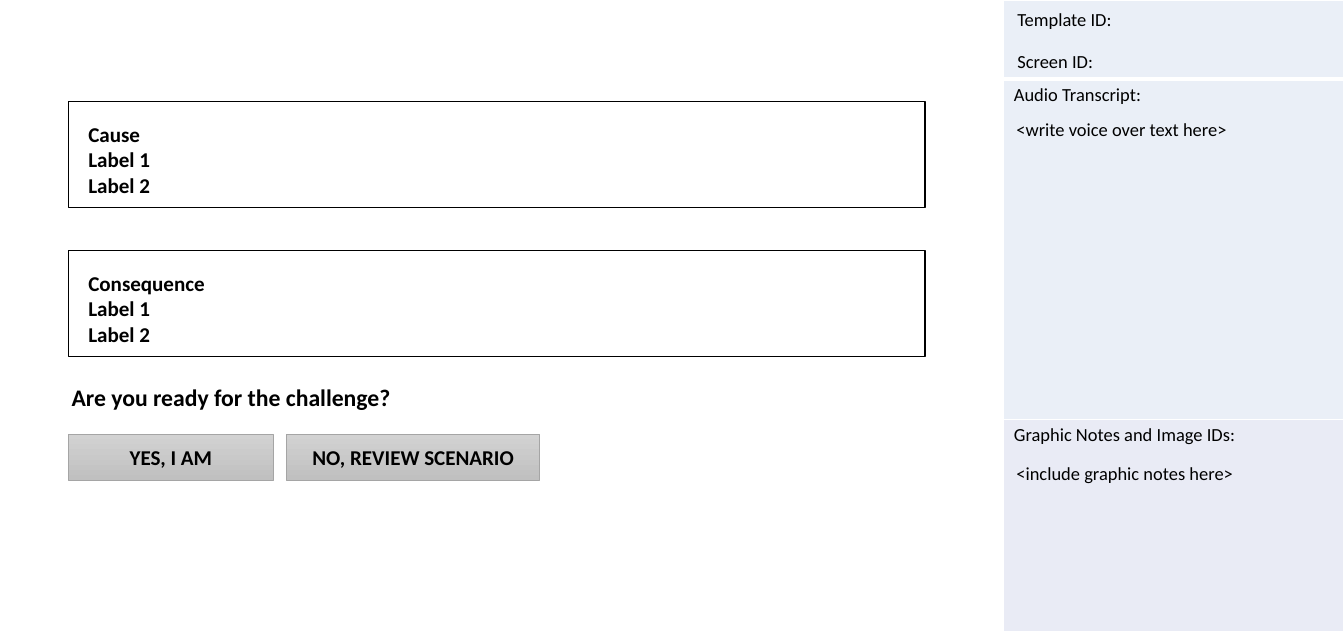
import pptx
import pptx.util
import pptx.dml.color
import pptx.enum.shapes
import pptx.enum.text
import pptx.oxml
import pptx.oxml.ns
from dataclasses import dataclass

Pt = pptx.util.Pt
ALIGN = pptx.enum.text.PP_ALIGN
ANCHOR = pptx.enum.text.MSO_ANCHOR
RECT = pptx.enum.shapes.MSO_SHAPE.RECTANGLE


@dataclass(frozen=True)
class Theme:
    font: str = "Calibri"
    ink: str = "000000"
    paper: str = "FFFFFF"
    pale: str = "EAEFF7"
    mist: str = "E9EBF5"
    light: str = "D2D2D2"
    dark: str = "C0C0C0"
    edge: str = "A5A5A5"
    note: int = 14
    label: int = 16
    ask: int = 18


THEME = Theme()


def rgb(code):
    return pptx.dml.color.RGBColor.from_string(code)


def write(frame, text, size, bold=False, align=ALIGN.LEFT):
    frame.text = text
    frame.word_wrap = True
    for para in frame.paragraphs:
        para.alignment = align
        for run in para.runs:
            run.font.name = THEME.font
            run.font.size = Pt(size)
            run.font.bold = bold
            run.font.color.rgb = rgb(THEME.ink)


def inset(frame, side, top):
    frame.margin_left = frame.margin_right = Pt(side)
    frame.margin_top = frame.margin_bottom = Pt(top)


def add_text(slide, box, text, size, **style):
    frame = slide.shapes.add_textbox(*map(Pt, box)).text_frame
    write(frame, text, size, **style)
    return frame


def add_rect(slide, box, line, width):
    shape = slide.shapes.add_shape(RECT, *map(Pt, box))
    shape.shadow.inherit = False
    shape.line.color.rgb = rgb(line)
    shape.line.width = Pt(width)
    return shape


def edge_cell(cell, top, base):
    """Rule all four sides of a table cell in white."""
    props = cell._tc.get_or_add_tcPr()
    sides = {"L": 1, "R": 1, "T": top, "B": base}
    for place, (side, width) in enumerate(sides.items()):
        props.insert(place, pptx.oxml.parse_xml(
            f'<a:ln{side} {pptx.oxml.ns.nsdecls("a")} w="{Pt(width)}">'
            f'<a:solidFill><a:srgbClr val="{THEME.paper}"/></a:solidFill>'
            f'</a:ln{side}>'))


def add_notes(slide, box):
    """Side panel: a three-row table with labels laid over it."""
    x, y, w, h = box
    rows = [
        ("", THEME.pale, 59.76, 1, 3),
        ("Audio Transcript:", THEME.pale, 258.48, 3, 1),
        ("Graphic Notes and Image IDs:", THEME.mist, 160.56, 1, 1),
    ]
    table = slide.shapes.add_table(len(rows), 1, *map(Pt, box)).table
    table.columns[0].width = Pt(w)
    for i, (text, fill, height, top, base) in enumerate(rows):
        table.rows[i].height = Pt(height)
        cell = table.cell(i, 0)
        cell.fill.solid()
        cell.fill.fore_color.rgb = rgb(fill)
        edge_cell(cell, top, base)
        inset(cell, 7.9, 3.6)
        if text:
            write(cell.text_frame, text, THEME.note)

    labels = [
        ("Screen ID:", 3.4, 34.6),
        ("Template ID:", 3.4, 2.9),
        ("<write voice over text here>", 2.7, 85.7),
        ("<include graphic notes here>", 2.7, 347),
    ]
    for text, dx, dy in labels:
        add_text(slide, (x + dx, y + dy, w - dx, 24.5), text, THEME.note)


def add_cards(slide, box):
    """Cause and consequence boxes, one above the other."""
    x, y, w, h = box
    tall = 80.6
    for i, head in enumerate(("Cause", "Consequence")):
        card = add_rect(slide, (x, y + i * (h - tall), w, tall), THEME.ink, 1)
        card.fill.solid()
        card.fill.fore_color.rgb = rgb(THEME.paper)
        frame = card.text_frame
        frame.vertical_anchor = ANCHOR.TOP
        inset(frame, 15.1, 15.1)
        write(frame, "\n".join((head, "Label 1", "Label 2")),
              THEME.label, bold=True)


def add_prompt(slide, box):
    """Question with its two answer buttons below."""
    x, y, w, h = box
    tall, gap = 35.3, 10
    left = x
    for text, wide in (("YES, I AM", 155.5), ("NO, REVIEW SCENARIO", 192.3)):
        button = add_rect(slide, (left, y + h - tall, wide, tall),
                          THEME.edge, 0.5)
        button.fill.gradient()
        button.fill.gradient_angle = 270
        for stop, code in zip(button.fill.gradient_stops,
                              (THEME.light, THEME.dark)):
            stop.color.rgb = rgb(code)
        frame = button.text_frame
        frame.vertical_anchor = ANCHOR.MIDDLE
        inset(frame, 0, 3.6)
        write(frame, text, THEME.label, bold=True, align=ALIGN.CENTER)
        left += wide + gap

    ask = add_text(slide, (x - 43.2, y, 333.4, 54),
                   "Are you ready for the challenge?", THEME.ask,
                   bold=True, align=ALIGN.CENTER)
    inset(ask, 15.1, 15.1)


def main():
    deck = pptx.Presentation()
    deck.slide_width = Pt(1020.24)
    deck.slide_height = Pt(481.68)
    slide = deck.slides.add_slide(deck.slide_layouts[6])
    add_notes(slide, (761.76, 0, 258.48, 478.8))
    add_cards(slide, (52, 77, 650.2, 193.7))
    add_prompt(slide, (52, 279.4, 357.8, 85))
    deck.save("out.pptx")


if __name__ == "__main__":
    main()
